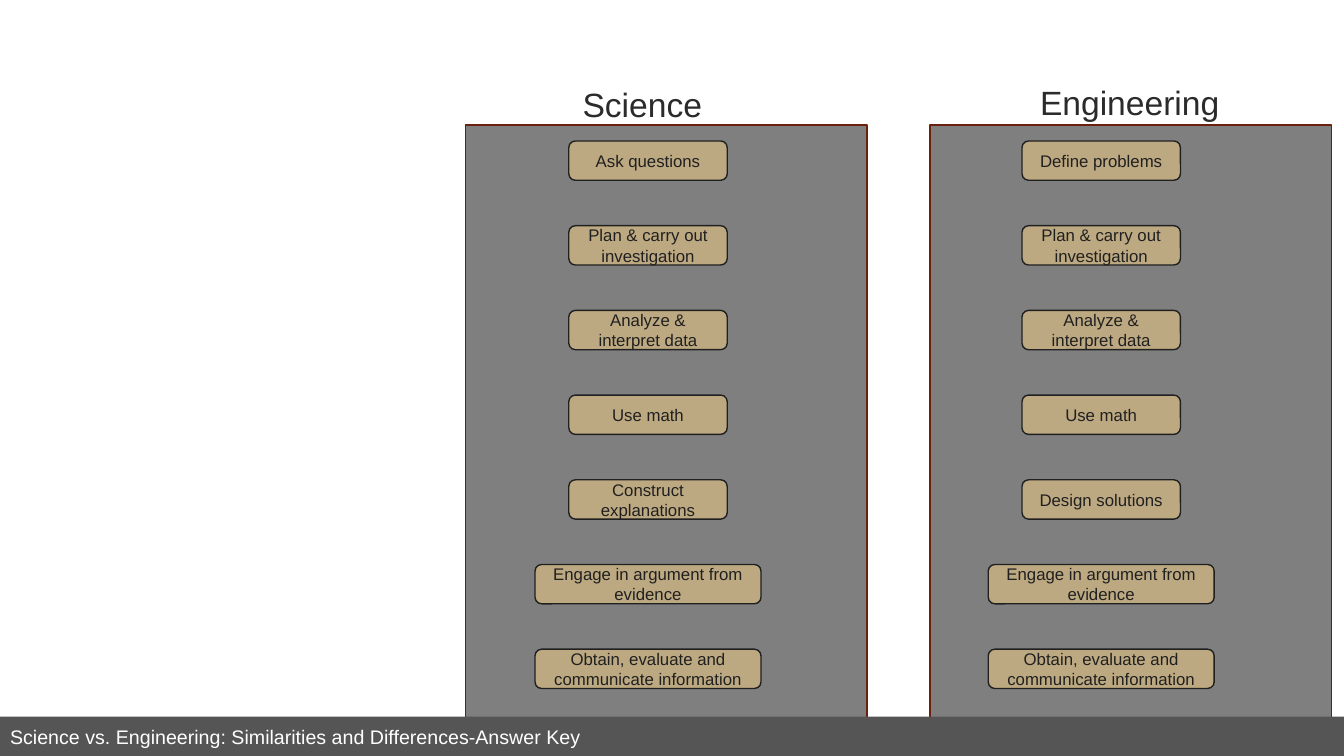
from pptx import Presentation
from pptx.dml.color import RGBColor
from pptx.enum.shapes import MSO_SHAPE
from pptx.enum.text import MSO_ANCHOR, MSO_AUTO_SIZE, PP_ALIGN
from pptx.util import Pt

COLORS = {
    "panel": "7F7F7F", "panel_line": "69200F",
    "card": "BDA981", "card_ink": "202020",
    "heading": "2B2B2B", "bar": "555556", "bar_text": "FFFFFF",
}
SLIDE_WIDTH, SLIDE_HEIGHT = 960, 540
PANEL_TOP, PANEL_WIDTH, PANEL_HEIGHT = 89.3, 286.6, 423.4
CARD_INSET, CARD_HEIGHT, CARD_STEP = 11.4, 28.1, 60.5
NARROW, WIDE = 113.2, 161.4
BAR_HEIGHT = 28.1

# Each column: heading, panel left, heading offset (x, y), card centre offset, practices
COLUMNS = [
    ("Science", 332.7, (76.3, -33.1), 130.2, [
        ("Ask questions", NARROW),
        ("Plan & carry out investigation", NARROW),
        ("Analyze & interpret data", NARROW),
        ("Use math", NARROW),
        ("Construct explanations", NARROW),
        ("Engage in argument from evidence", WIDE),
        ("Obtain, evaluate and communicate information", WIDE),
    ]),
    ("Engineering", 664.4, (71.4, -34), 122.2, [
        ("Define problems", NARROW),
        ("Plan & carry out investigation", NARROW),
        ("Analyze & interpret data", NARROW),
        ("Use math", NARROW),
        ("Design solutions", NARROW),
        ("Engage in argument from evidence", WIDE),
        ("Obtain, evaluate and communicate information", WIDE),
    ]),
]


def color(key):
    return RGBColor.from_string(COLORS[key])


def write(shape, text, size, ink, align, anchor):
    frame = shape.text_frame
    frame_format = {"text": text, "word_wrap": True, "vertical_anchor": anchor,
                    "auto_size": MSO_AUTO_SIZE.NONE}
    for name, value in frame_format.items():
        setattr(frame, name, value)
    paragraph = frame.paragraphs[0]
    paragraph.alignment = align
    for name, value in {"name": "Arial", "size": Pt(size)}.items():
        setattr(paragraph.font, name, value)
    paragraph.font.color.rgb = color(ink)


def add_block(slide, preset, box, fill, line):
    block = slide.shapes.add_shape(preset, *map(Pt, box))
    block.shadow.inherit = False
    block.fill.solid()
    block.fill.fore_color.rgb = color(fill)
    block.line.color.rgb = color(line)
    block.line.width = Pt(1)
    return block


def add_column(slide, box, heading, heading_offset, card_center, practices):
    left, top, _, _ = box
    add_block(slide, MSO_SHAPE.RECTANGLE, box, "panel", "panel_line")
    dx, dy = heading_offset
    label = slide.shapes.add_textbox(Pt(left + dx), Pt(top + dy), Pt(201), Pt(36))
    write(label, heading, 24, "heading", PP_ALIGN.LEFT, MSO_ANCHOR.TOP)
    for row, (practice, width) in enumerate(practices):
        card_box = (left + card_center - width / 2,
                    top + CARD_INSET + row * CARD_STEP, width, CARD_HEIGHT)
        card = add_block(slide, MSO_SHAPE.ROUNDED_RECTANGLE, card_box, "card", "card_ink")
        write(card, practice, 12, "card_ink", PP_ALIGN.CENTER, MSO_ANCHOR.MIDDLE)


def place_title_bar(slide, box, text):
    """Turn the title placeholder into the bar in front of the panels."""
    title = slide.shapes.title
    for name, value in zip(("left", "top", "width", "height"), box):
        setattr(title, name, Pt(value))
    title.fill.solid()
    title.fill.fore_color.rgb = color("bar")
    write(title, text, 14, "bar_text", PP_ALIGN.LEFT, MSO_ANCHOR.MIDDLE)
    margins = {"margin_left": 7.2, "margin_right": 7.2, "margin_top": 5, "margin_bottom": 5}
    for name, value in margins.items():
        setattr(title.text_frame, name, Pt(value))
    slide.shapes.element.append(title.element)


def main():
    deck = Presentation()
    deck.slide_width, deck.slide_height = Pt(SLIDE_WIDTH), Pt(SLIDE_HEIGHT)
    slide = deck.slides.add_slide(deck.slide_layouts[5])
    for heading, left, heading_offset, card_center, practices in COLUMNS:
        panel = (left, PANEL_TOP, PANEL_WIDTH, PANEL_HEIGHT)
        add_column(slide, panel, heading, heading_offset, card_center, practices)
    place_title_bar(slide, (0, SLIDE_HEIGHT - BAR_HEIGHT, SLIDE_WIDTH, BAR_HEIGHT),
                    "Science vs. Engineering: Similarities and Differences-Answer Key")
    deck.save("out.pptx")


if __name__ == "__main__":
    main()
